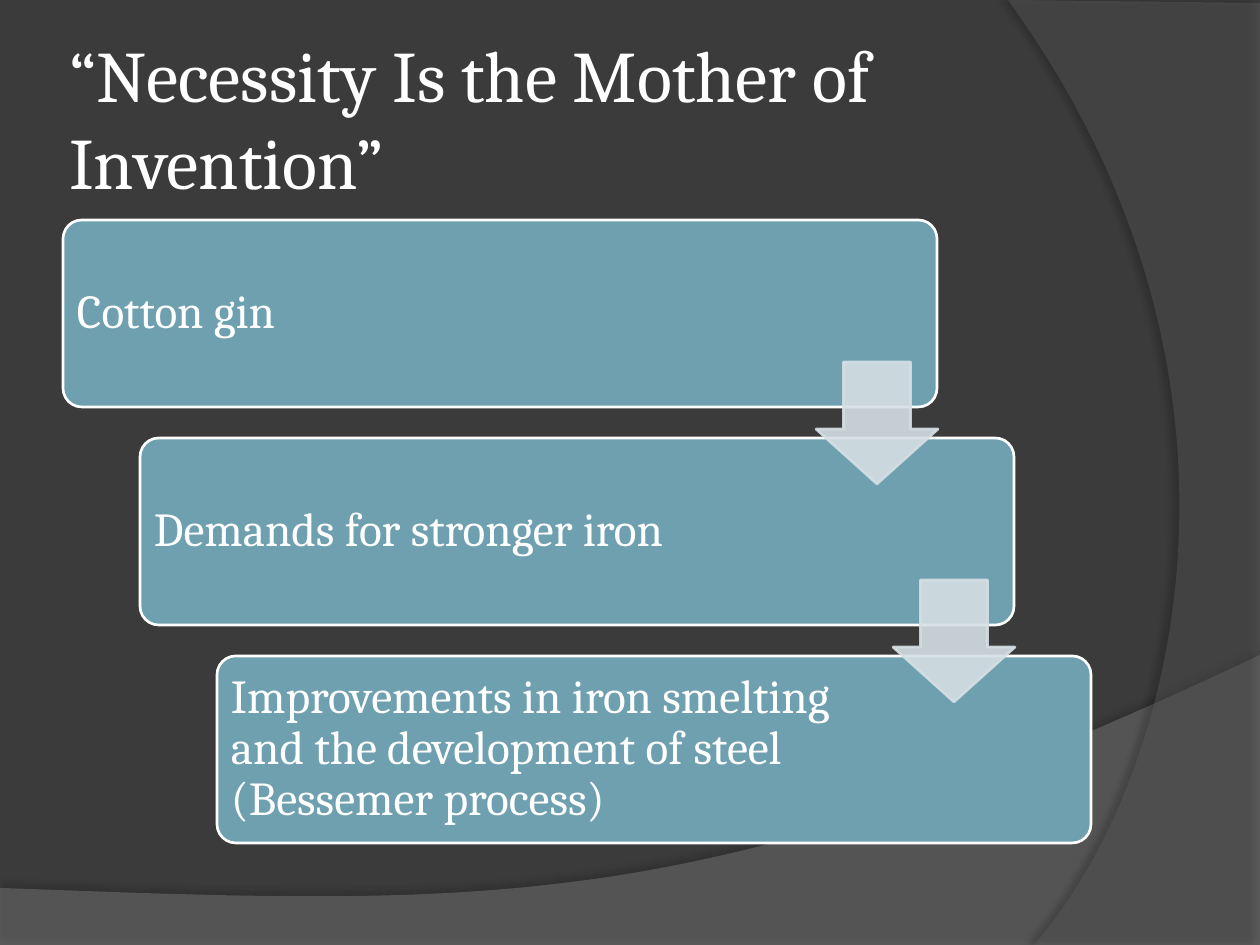
"""Builds a slide with a three-step staircase of inventions on a dark curved background."""
from lxml import etree
from pptx import Presentation
from pptx.dml.color import RGBColor
from pptx.enum.shapes import MSO_SHAPE
from pptx.enum.text import MSO_ANCHOR
from pptx.oxml.ns import qn
from pptx.util import Pt

ROUND_RECT = MSO_SHAPE.ROUNDED_RECTANGLE
DOWN_ARROW = MSO_SHAPE.DOWN_ARROW
MIDDLE = MSO_ANCHOR.MIDDLE

DARK = RGBColor(0x3B, 0x3B, 0x3B)
GRAY = RGBColor(0x7F, 0x7F, 0x7F)
MID_GRAY = RGBColor(0x5E, 0x5E, 0x5E)
WHITE = RGBColor(0xFF, 0xFF, 0xFF)
TEAL = RGBColor(0x6E, 0xA0, 0xB0)
PALE = RGBColor(0xD5, 0xDF, 0xE4)

FONT = "Cambria"
TITLE = "“Necessity Is the Mother of Invention”"
STEPS = [
    ("Cotton gin", 684),
    ("Demands for stronger iron", 675),
    ("Improvements in iron smelting and the development of steel (Bessemer process)", 675),
]
SWOOSHES = [
    dict(corners=[(0, 946), (1260, 946)],
         curve=[(1260, 655), (704, 919), (493, 906), (0, 888)],
         color=GRAY, alpha=45, shadow=(35, 4, 3.5, 270)),
    dict(corners=[(1260, 3), (1260, 945)],
         curve=[(1034, 945), (1178, 780), (1283, 378), (1008, 0)],
         color=MID_GRAY, alpha=40, shadow=(45, 4, 4, 180)),
]

LEFT, TOP = 63, 220
STEP_X, STEP_Y = 77, 218
BOX_W, BOX_H = 874, 187
ARROW_X, ARROW_Y, ARROW = 816, 362, 122
CURVE_PARTS = 60


def px(n):
    return round(n * 914400 / 126)


def set_alpha(color_format_parent, percent):
    for color in color_format_parent.iter(qn("a:srgbClr")):
        etree.SubElement(color, qn("a:alpha"), val=str(percent * 1000))


def bezier(p0, p1, p2, p3):
    for i in range(CURVE_PARTS + 1):
        t = i / CURVE_PARTS
        u = 1 - t
        yield tuple(u**3 * a + 3 * u * u * t * b + 3 * u * t * t * c + t**3 * d
                    for a, b, c, d in zip(p0, p1, p2, p3))


def add_swoosh(s, corners, curve, color, alpha, shadow):
    points = [(px(x), px(y)) for x, y in corners + list(bezier(*curve))]
    builder = s.shapes.build_freeform(*points[0])
    builder.add_line_segments(points[1:], close=True)
    sp = builder.convert_to_shape()
    sp.fill.solid()
    sp.fill.fore_color.rgb = color
    sp.line.fill.background()
    sp.shadow.inherit = False
    sp_pr = sp._element.spPr
    set_alpha(sp_pr, alpha)
    opacity, blur, dist, angle = shadow
    outer = etree.SubElement(
        sp_pr.find(qn("a:effectLst")), qn("a:outerShdw"), blurRad=str(Pt(blur)),
        dist=str(Pt(dist)), dir=str(angle * 60000), algn="ctr", rotWithShape="0")
    etree.SubElement(outer, qn("a:srgbClr"), val="000000")
    set_alpha(outer, opacity)


def add_shape(s, kind, x, y, w, h, adjustments, fill, line, alpha=100):
    sp = s.shapes.add_shape(kind, px(x), px(y), px(w), px(h))
    for i, value in enumerate(adjustments):
        sp.adjustments[i] = value
    sp.fill.solid()
    sp.fill.fore_color.rgb = fill
    sp.line.color.rgb = line
    sp.line.width = Pt(1.5)
    sp.shadow.inherit = False
    if alpha < 100:
        set_alpha(sp._element.spPr, alpha)


def add_text(s, text, x, y, w, h, size, inset, spacing=1.0):
    tf = s.shapes.add_textbox(px(x), px(y), px(w), px(h)).text_frame
    tf.word_wrap = True
    tf.vertical_anchor = MIDDLE
    tf.margin_left = tf.margin_right = tf.margin_top = tf.margin_bottom = px(inset)
    p = tf.paragraphs[0]
    p.line_spacing = spacing
    r = p.add_run()
    r.text = text
    r.font.name = FONT
    r.font.size = Pt(size)
    r.font.color.rgb = WHITE


def main():
    prs = Presentation()
    prs.slide_width, prs.slide_height = px(1260), px(945)
    s = prs.slides.add_slide(prs.slide_layouts[6])
    s.background.fill.solid()
    s.background.fill.fore_color.rgb = DARK

    for swoosh in SWOOSHES:
        add_swoosh(s, **swoosh)
    add_text(s, TITLE, 63, 38, 1029, 157, size=41.4, inset=6)
    for i, (text, width) in enumerate(STEPS):
        x, y = LEFT + i * STEP_X, TOP + i * STEP_Y
        add_shape(s, ROUND_RECT, x, y, BOX_W, BOX_H, [0.1], TEAL, WHITE)
        add_text(s, text, x, y, width, BOX_H, size=27, inset=14, spacing=0.9)
    for i in range(len(STEPS) - 1):
        add_shape(s, DOWN_ARROW, ARROW_X + i * STEP_X, ARROW_Y + i * STEP_Y,
                  ARROW, ARROW, [0.55, 0.45], PALE, PALE, alpha=90)
    prs.save("out.pptx")


if __name__ == "__main__":
    main()
